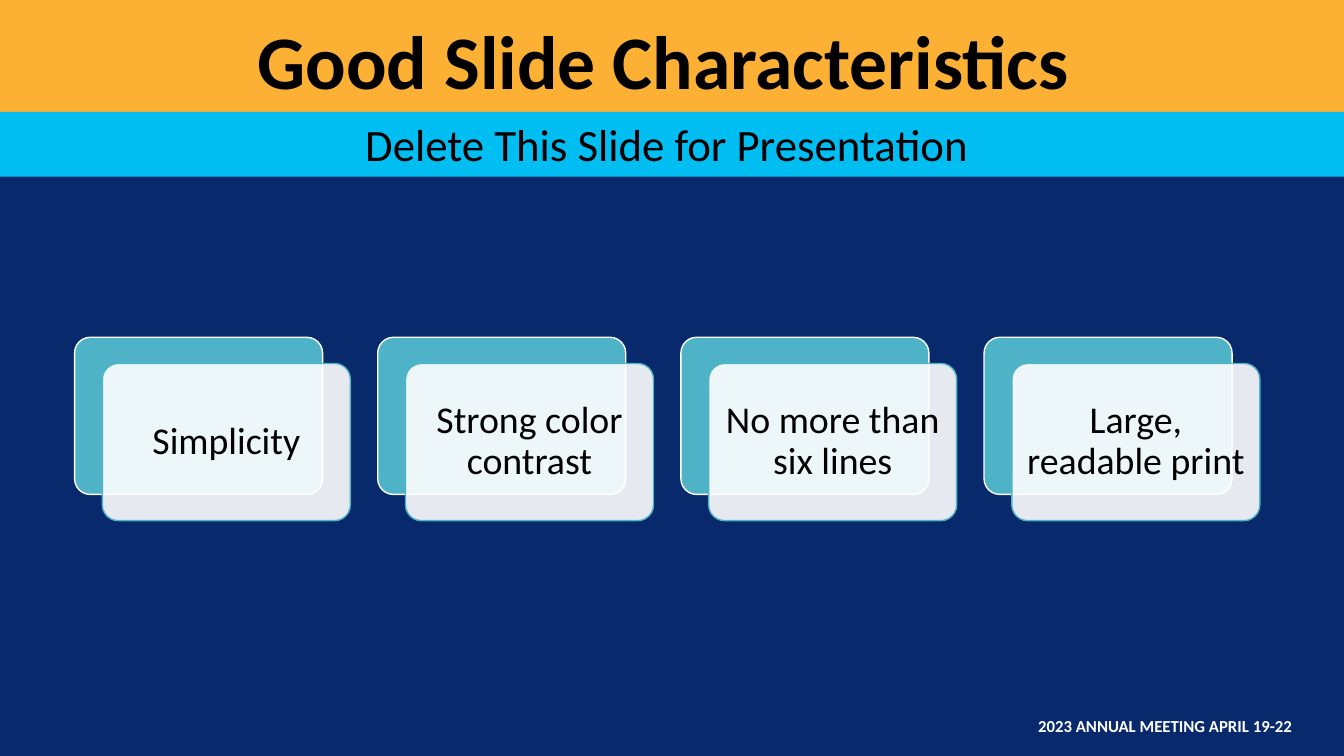
from lxml import etree
from pptx import Presentation, util as u
from pptx.dml.color import RGBColor
from pptx.enum import shapes, text
from pptx.oxml.ns import qn

TITLE = "Good Slide Characteristics "
SUBTITLE = "Delete This Slide for Presentation "
TRAITS = ["Simplicity", "Strong color contrast", "No more than six lines", "Large, readable print"]
FOOTER = "2023 ANNUAL MEETING APRIL 19-22"

COLORS = {
    "navy": "08296B", "orange": "FCB034", "sky": "00BDF2",
    "teal": "4EB3C7", "white": "FFFFFF", "black": "000000",
}
FONT = "Calibri"

# Lengths in centimetres
SLIDE_W, SLIDE_H = 33.87, 19.05
TITLE_BAR = (0, 0, SLIDE_W, 3.35)
SUBTITLE_BAR = (0, 2.82, SLIDE_W, 1.63)
FOOTER_BOX = (25.91, 17.96, 7.9, 0.64)
CARD_LEFT, CARD_TOP, CARD_W, CARD_H = 1.88, 8.5, 6.25, 3.96
CARD_PITCH = 7.64
SHIFT_X, SHIFT_Y = 0.7, 0.66


def color(name):
    return RGBColor.from_string(COLORS[name])


def add_panel(page, area, fill, line=None, radius=None, opacity=None):
    """Add a filled rectangle, rounded when a radius ratio is given; opacity is in percent."""
    kind = shapes.MSO_SHAPE.RECTANGLE if radius is None else shapes.MSO_SHAPE.ROUNDED_RECTANGLE
    panel = page.shapes.add_shape(kind, *map(u.Cm, area))
    panel.shadow.inherit = False
    if radius is not None:
        panel.adjustments[0] = radius
    panel.fill.solid()
    panel.fill.fore_color.rgb = color(fill)
    if opacity is not None:
        tone = panel.fill._xPr.find(f".//{qn('a:srgbClr')}")
        etree.SubElement(tone, qn("a:alpha"), val=str(opacity * 1000))
    if line is None:
        panel.line.fill.background()
    else:
        panel.line.color.rgb = color(line)
        panel.line.width = u.Pt(1)
    return panel


def write(box, words, size, ink="black", bold=False, align=text.PP_ALIGN.CENTER,
          anchor=text.MSO_ANCHOR.MIDDLE, spacing=1.0, inset=(0.25, 0.13)):
    frame = box.text_frame
    frame.word_wrap = True
    frame.vertical_anchor = anchor
    frame.margin_left = frame.margin_right = u.Cm(inset[0])
    frame.margin_top = frame.margin_bottom = u.Cm(inset[1])
    para = frame.paragraphs[0]
    para.alignment = align
    para.line_spacing = spacing
    span = para.add_run()
    span.text = words
    span.font.name = FONT
    span.font.size = u.Pt(size)
    span.font.bold = bold
    span.font.color.rgb = color(ink)


def add_card(page, left, words):
    """Add a teal card with a translucent white card, holding the words, shifted over it."""
    add_panel(page, (left, CARD_TOP, CARD_W, CARD_H), "teal", line="white", radius=0.1)
    front = add_panel(page, (left + SHIFT_X, CARD_TOP + SHIFT_Y, CARD_W, CARD_H),
                      "white", line="teal", radius=0.1, opacity=90)
    write(front, words, 27, spacing=0.9, inset=(0.27, 0.27))


def main():
    deck = Presentation()
    deck.slide_width, deck.slide_height = u.Cm(SLIDE_W), u.Cm(SLIDE_H)
    page = deck.slides.add_slide(deck.slide_layouts[6])
    page.background.fill.solid()
    page.background.fill.fore_color.rgb = color("navy")

    write(add_panel(page, TITLE_BAR, "orange"), TITLE, 54, bold=True, spacing=0.85)
    for index, trait in enumerate(TRAITS):
        add_card(page, CARD_LEFT + index * CARD_PITCH, trait)
    write(add_panel(page, SUBTITLE_BAR, "sky"), SUBTITLE, 32, anchor=text.MSO_ANCHOR.TOP)

    footer = page.shapes.add_textbox(*map(u.Cm, FOOTER_BOX))
    write(footer, FOOTER, 12, ink="white", bold=True, align=text.PP_ALIGN.LEFT)
    deck.save("out.pptx")


if __name__ == "__main__":
    main()
